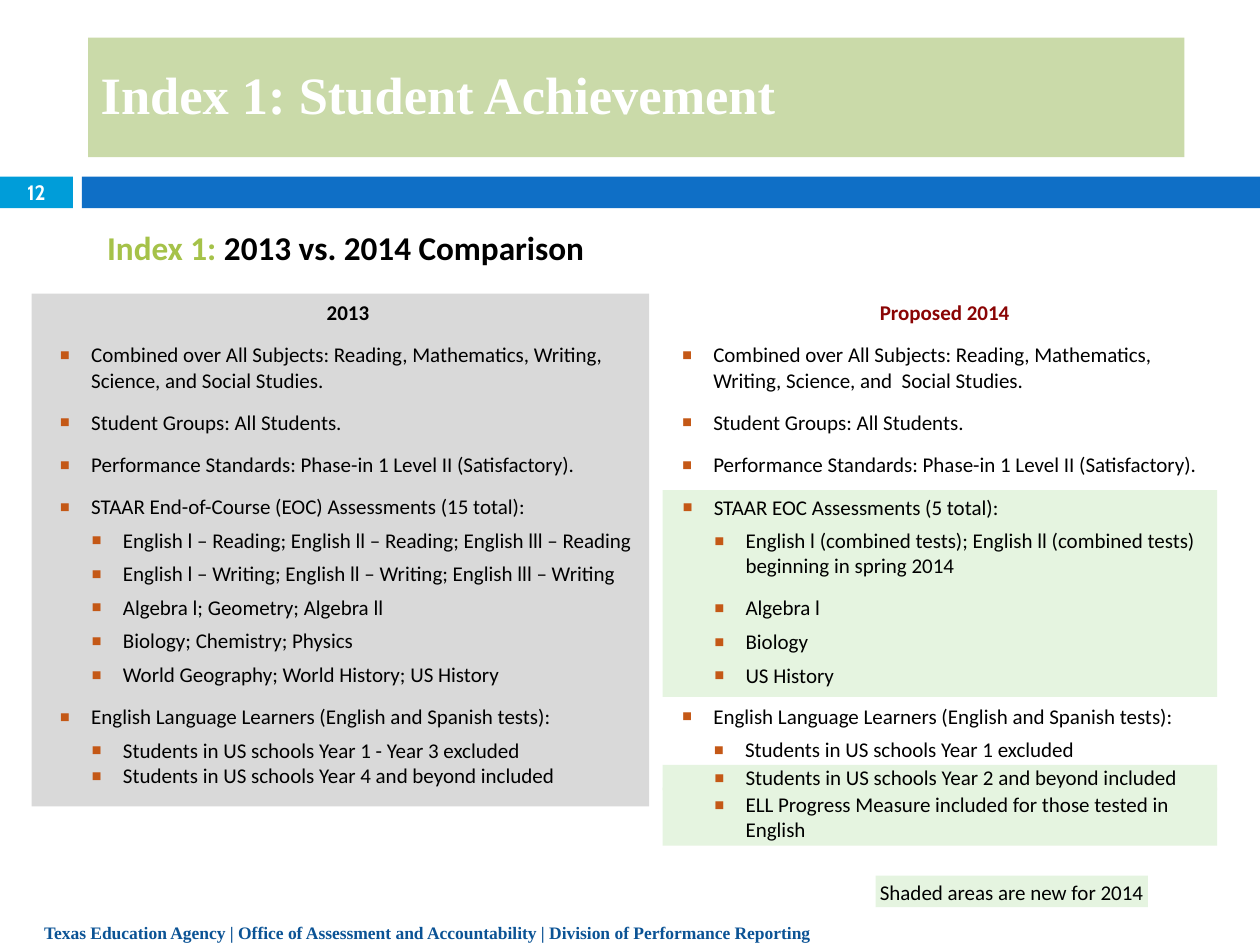
from dataclasses import dataclass

from lxml.etree import SubElement
from pptx import Presentation
from pptx.dml.color import RGBColor
from pptx.enum.shapes import MSO_SHAPE as Preset
from pptx.enum.text import MSO_ANCHOR as Anchor, PP_ALIGN as Align
from pptx.oxml.ns import qn
from pptx.util import Cm, Pt

GREEN, BLACK, WHITE = "E5F4E0", "000000", "FFFFFF"
SERIF = "Times New Roman"
WIDE, NARROW = 9.7, 4.8
HANG = 0.64
INDENTS = (0.95, 1.59)


@dataclass(frozen=True)
class Box:
    left: float
    top: float
    width: float
    height: float
    fill: str | None = None
    inset: float | None = None
    anchor: Anchor = Anchor.TOP
    wrap: bool = True


@dataclass(frozen=True)
class Bullet:
    text: str
    level: int = 0
    gap: float = WIDE


def color(value: str) -> RGBColor:
    return RGBColor.from_string(value)


def add_box(slide, box: Box):
    place = [Cm(length) for length in (box.left, box.top, box.width, box.height)]
    if box.fill:
        shape = slide.shapes.add_shape(Preset.RECTANGLE, *place)
        shape.shadow.inherit = False
        shape.fill.solid()
        shape.fill.fore_color.rgb = color(box.fill)
        shape.line.fill.background()
    else:
        shape = slide.shapes.add_textbox(*place)
    frame = shape.text_frame
    frame.word_wrap = box.wrap
    frame.vertical_anchor = box.anchor
    if box.inset is not None:
        frame.margin_left = frame.margin_right = Cm(box.inset)
        frame.margin_top = frame.margin_bottom = Cm(box.inset)
    return frame


def write(paragraph, text: str, *, size: float = 12, font: str = "Calibri", ink: str = BLACK,
          bold: bool = False, align: Align = Align.LEFT, spacing: float | None = None) -> None:
    paragraph.alignment = align
    if spacing:
        paragraph.line_spacing = Pt(spacing)
    run = paragraph.add_run()
    run.text = text
    run.font.size, run.font.name, run.font.bold = Pt(size), font, bold
    run.font.color.rgb = color(ink)


def add_bullets(frame, bullets: list[Bullet]) -> None:
    for bullet in bullets:
        first = frame.paragraphs[0]
        fresh = not first.runs
        paragraph = first if fresh else frame.add_paragraph()
        paragraph.space_before = Pt(0 if fresh else bullet.gap)
        paragraph.level = bullet.level
        props = paragraph._p.get_or_add_pPr()
        props.set("marL", str(Cm(INDENTS[bullet.level])))
        props.set("indent", str(-Cm(HANG)))
        tint = SubElement(props, qn("a:buClr"))
        SubElement(tint, qn("a:srgbClr"), val="C45816")
        SubElement(props, qn("a:buSzPct"), val="150000")
        SubElement(props, qn("a:buFont"), typeface="Arial")
        SubElement(props, qn("a:buChar"), char="▪")
        write(paragraph, bullet.text)


def add_column(slide, box: Box, year: str, ink: str, bullets: list[Bullet]) -> None:
    frame = add_box(slide, box)
    heading = frame.paragraphs[0]
    heading._p.get_or_add_pPr().set("marL", str(Cm(0.3)))
    write(heading, year, ink=ink, bold=True, align=Align.CENTER)
    add_bullets(frame, bullets)


def green_panel(top: float, height: float, anchor: Anchor = Anchor.TOP) -> Box:
    return Box(13.36, top, 11.18, height, GREEN, 0.08, anchor)


def shared_bullets(subjects: str) -> list[Bullet]:
    return [
        Bullet(subjects),
        Bullet("Student Groups: All Students."),
        Bullet("Performance Standards: Phase-in 1 Level II (Satisfactory)."),
    ]


def build() -> None:
    """Build the slide comparing Index 1 in 2013 and 2014."""
    deck = Presentation()
    deck.slide_width, deck.slide_height = Cm(25.4), Cm(19.05)
    slide = deck.slides.add_slide(deck.slide_layouts[6])

    number = add_box(slide, Box(0, 3.56, 1.47, 0.64, "009DD9", 0, Anchor.MIDDLE))
    write(number.paragraphs[0], "12", size=11.9, font="Cabin", ink=WHITE, bold=True,
          align=Align.CENTER)
    add_box(slide, Box(1.65, 3.56, 23.75, 0.64, "0F6FC6"))

    title = add_box(slide, Box(1.78, 0.76, 22.1, 2.41, "CADAA9", anchor=Anchor.MIDDLE))
    write(title.paragraphs[0], "Index 1: Student Achievement", size=30, font=SERIF,
          ink=WHITE, bold=True, spacing=32)

    footer = add_box(slide, Box(0.64, 17.96, 22.86, 1.04))
    write(footer.paragraphs[0],
          "Texas Education Agency | Office of Assessment and Accountability | "
          "Division of Performance Reporting",
          size=10, font=SERIF, ink="0B5395", bold=True, spacing=26)

    subtitle = add_box(slide, Box(1.91, 4.45, 10.41, 1.07, wrap=False)).paragraphs[0]
    write(subtitle, "Index 1: ", size=19, ink="A5C249", bold=True)
    write(subtitle, "2013 vs. 2014 Comparison", size=19, bold=True)

    learners = Bullet("English Language Learners (English and Spanish tests):")
    courses = [
        "English l – Reading; English ll – Reading; English lll – Reading",
        "English l – Writing; English ll – Writing; English lll – Writing",
        "Algebra l; Geometry; Algebra ll",
        "Biology; Chemistry; Physics",
        "World Geography; World History; US History",
    ]
    add_column(slide, Box(0.64, 5.92, 12.45, 10.34, "D9D9D9"), "2013", BLACK, [
        *shared_bullets("Combined over All Subjects: Reading, Mathematics, Writing, "
                        "Science, and Social Studies."),
        Bullet("STAAR End-of-Course (EOC) Assessments (15 total):"),
        *(Bullet(course, 1, NARROW) for course in courses),
        learners,
        Bullet("Students in US schools Year 1 - Year 3 excluded", 1, NARROW),
        Bullet("Students in US schools Year 4 and beyond included", 1, 0),
    ])
    add_column(slide, Box(13.18, 5.92, 11.43, 3.95), "Proposed 2014", "8A0404",
               shared_bullets("Combined over All Subjects: Reading, Mathematics, Writing, "
                              "Science, and  Social Studies."))

    add_bullets(add_box(slide, green_panel(9.88, 4.17)), [
        Bullet("STAAR EOC Assessments (5 total):"),
        Bullet("English l (combined tests); English ll (combined tests) "
               "beginning in spring 2014", 1, NARROW),
        Bullet("Algebra l", 1),
        Bullet("Biology", 1, NARROW),
        Bullet("US History", 1, NARROW),
    ])
    add_bullets(add_box(slide, Box(13.18, 14.05, 11.43, 1.37)), [
        learners,
        Bullet("Students in US schools Year 1 excluded", 1, NARROW),
    ])
    add_bullets(add_box(slide, green_panel(15.42, 0.51, Anchor.MIDDLE)),
                [Bullet("Students in US schools Year 2 and beyond included", 1)])
    add_bullets(add_box(slide, green_panel(15.88, 1.17, Anchor.MIDDLE)),
                [Bullet("ELL Progress Measure included for those tested in English", 1)])

    legend = add_box(slide, Box(17.65, 17.65, 5.49, 0.64, GREEN, 0.08))
    write(legend.paragraphs[0], "Shaded areas are new for 2014", align=Align.CENTER)

    deck.save("out.pptx")


if __name__ == "__main__":
    build()
